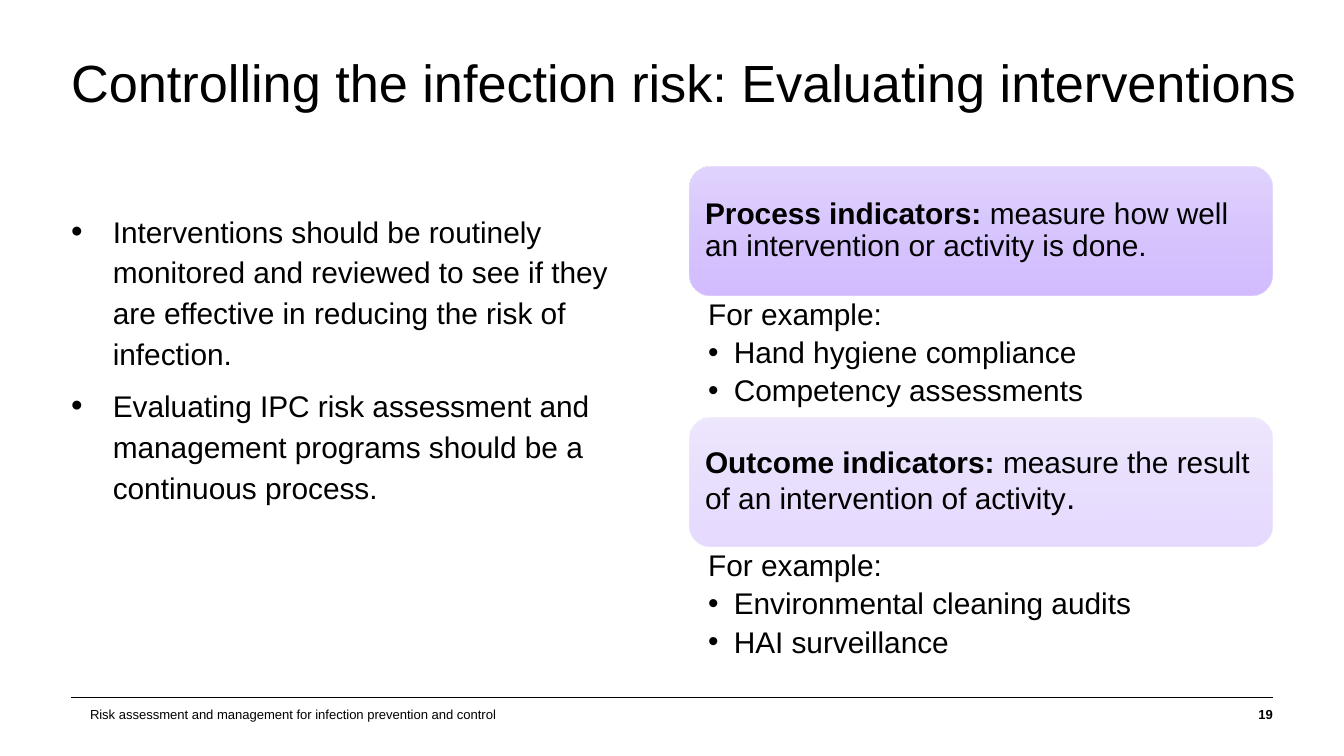
from lxml import etree
from pptx import Presentation
from pptx.dml.color import RGBColor
from pptx.enum.shapes import MSO_CONNECTOR, MSO_SHAPE
from pptx.enum.text import MSO_ANCHOR, MSO_AUTO_SIZE, PP_ALIGN
from pptx.oxml.ns import qn
from pptx.util import Inches, Pt

BLACK = RGBColor(0x00, 0x00, 0x00)
GRADIENT = [
    (0, RGBColor(0xDF, 0xD0, 0xFE)),
    (50, RGBColor(0xD4, 0xC0, 0xFE)),
    (100, RGBColor(0xCE, 0xB6, 0xFF)),
]
FONT = "Arial"
STRAIGHT = MSO_CONNECTOR.STRAIGHT
ROUNDED = MSO_SHAPE.ROUNDED_RECTANGLE
TOP, MIDDLE = MSO_ANCHOR.TOP, MSO_ANCHOR.MIDDLE
LEFT, RIGHT = PP_ALIGN.LEFT, PP_ALIGN.RIGHT
NO_AUTOFIT = MSO_AUTO_SIZE.NONE

SLIDE_WIDTH = 10
SLIDE_HEIGHT = SLIDE_WIDTH * 9 / 16
MARGIN, EDGE = 0.53, 9.47
CARD_LEFT, CARD_TOP, CARD_PITCH = 5.13, 1.24, 1.87
CARD_WIDTH, CARD_HEIGHT = 4.34, 0.96

INTERVENTIONS = [
    "Interventions should be routinely monitored and reviewed to see if they "
    "are effective in reducing the risk of infection.",
    "Evaluating IPC risk assessment and management programs should be a "
    "continuous process.",
]
INDICATORS = [
    (
        [("Process indicators: ", 16, True),
         ("measure how well an intervention or activity is done.", 16, False)],
        ["Hand hygiene compliance", "Competency assessments"],
        90,
    ),
    (
        [("Outcome indicators: ", 16, True),
         ("measure the result of an intervention of activity", 16, False),
         (".", 18, False)],
        ["Environmental cleaning audits", "HAI surveillance"],
        50,
    ),
]


def add_run(p, text, size, bold=False):
    r = p.add_run()
    r.text = text
    r.font.name = FONT
    r.font.size = Pt(size)
    r.font.bold = bold
    r.font.color.rgb = BLACK


def set_frame(tf, insets=(0, 0, 0, 0), anchor=TOP, wrap=True):
    tf.auto_size = NO_AUTOFIT
    tf.word_wrap = wrap
    tf.vertical_anchor = anchor
    tf.margin_left, tf.margin_top, tf.margin_right, tf.margin_bottom = map(Inches, insets)


def add_text_box(slide, left, top, width, height, **frame):
    box = slide.shapes.add_textbox(Inches(left), Inches(top), Inches(width), Inches(height))
    set_frame(box.text_frame, **frame)
    return box.text_frame


def set_indent(p, indent, bullet=True, bullet_size=100):
    pPr = p._p.get_or_add_pPr()
    pPr.set("marL", str(Inches(indent)))
    pPr.set("indent", str(-Inches(indent)))
    if bullet:
        etree.SubElement(pPr, qn("a:buSzPct"), val=str(bullet_size * 1000))
        etree.SubElement(pPr, qn("a:buFont"), typeface=FONT)
        etree.SubElement(pPr, qn("a:buChar"), char="•")


def next_paragraph(tf, index):
    return tf.add_paragraph() if index else tf.paragraphs[0]


def add_title(slide, text):
    title = slide.shapes.title
    title.left, title.top = Inches(MARGIN), Inches(0.41)
    title.width, title.height = Inches(10.15), Inches(0.54)
    set_frame(title.text_frame)
    p = title.text_frame.paragraphs[0]
    p.alignment = LEFT
    p.line_spacing = 0.95
    add_run(p, text, 28)


def add_interventions(slide):
    tf = add_text_box(slide, MARGIN, 1.55, 4.34, 3.44)
    for i, text in enumerate(INTERVENTIONS):
        p = next_paragraph(tf, i)
        set_indent(p, 0.31, bullet_size=110)
        p.line_spacing = 1.14
        p.space_before = Pt(6 if i else 0)
        add_run(p, text, 16)


def set_gradient(s, alpha):
    s.fill.gradient()
    s.fill.gradient_angle = 270
    stops = s._element.spPr.find(qn("a:gradFill")).find(qn("a:gsLst"))
    for stop in list(stops):
        stops.remove(stop)
    for position, color in GRADIENT:
        stop = etree.SubElement(stops, qn("a:gs"), pos=str(position * 1000))
        rgb = etree.SubElement(stop, qn("a:srgbClr"), val=str(color))
        etree.SubElement(rgb, qn("a:alpha"), val=str(alpha * 1000))


def add_indicator_card(slide, top, runs, alpha):
    s = slide.shapes.add_shape(
        ROUNDED, Inches(CARD_LEFT), Inches(top), Inches(CARD_WIDTH), Inches(CARD_HEIGHT))
    s.shadow.inherit = False
    s.line.fill.background()
    set_gradient(s, alpha)
    set_frame(s.text_frame, insets=(0.07, 0.07, 0.07, 0.07), anchor=MIDDLE)
    p = s.text_frame.paragraphs[0]
    p.alignment = LEFT
    p.line_spacing = 0.9
    p.space_after = Pt(6)
    for text, size, bold in runs:
        add_run(p, text, size, bold)


def add_examples(slide, top, examples):
    tf = add_text_box(slide, CARD_LEFT, top, CARD_WIDTH, 0.91, insets=(0.14, 0.02, 0.12, 0.02))
    for i, text in enumerate(["For example:"] + examples):
        p = next_paragraph(tf, i)
        set_indent(p, 0.19, bullet=i > 0)
        p.line_spacing = 0.9
        p.space_after = Pt(3.2)
        add_run(p, text, 16)


def add_footer_text(slide, left, width, text, align=LEFT, bold=False):
    tf = add_text_box(slide, left, 5.24, width, 0.15, anchor=MIDDLE, wrap=False)
    p = tf.paragraphs[0]
    p.alignment = align
    add_run(p, text, 7, bold)


def add_footer_rule(slide):
    rule = slide.shapes.add_connector(
        STRAIGHT, Inches(MARGIN), Inches(5.19), Inches(EDGE), Inches(5.19))
    rule.line.color.rgb = BLACK
    rule.line.width = Pt(0.5)
    etree.SubElement(rule._element.spPr, qn("a:effectLst"))


def main():
    prs = Presentation()
    prs.slide_width, prs.slide_height = Inches(SLIDE_WIDTH), Inches(SLIDE_HEIGHT)
    slide = prs.slides.add_slide(prs.slide_layouts[5])
    add_footer_rule(slide)
    add_title(slide, "Controlling the infection risk: Evaluating interventions")
    add_interventions(slide)
    for i, (runs, examples, alpha) in enumerate(INDICATORS):
        top = CARD_TOP + i * CARD_PITCH
        add_indicator_card(slide, top, runs, alpha)
        add_examples(slide, top + CARD_HEIGHT + 0.01, examples)
    add_footer_text(
        slide, 0.67, 3.06, "Risk assessment and management for infection prevention and control")
    add_footer_text(slide, 9.22, 0.25, "19", align=RIGHT, bold=True)
    prs.save("out.pptx")


if __name__ == "__main__":
    main()
